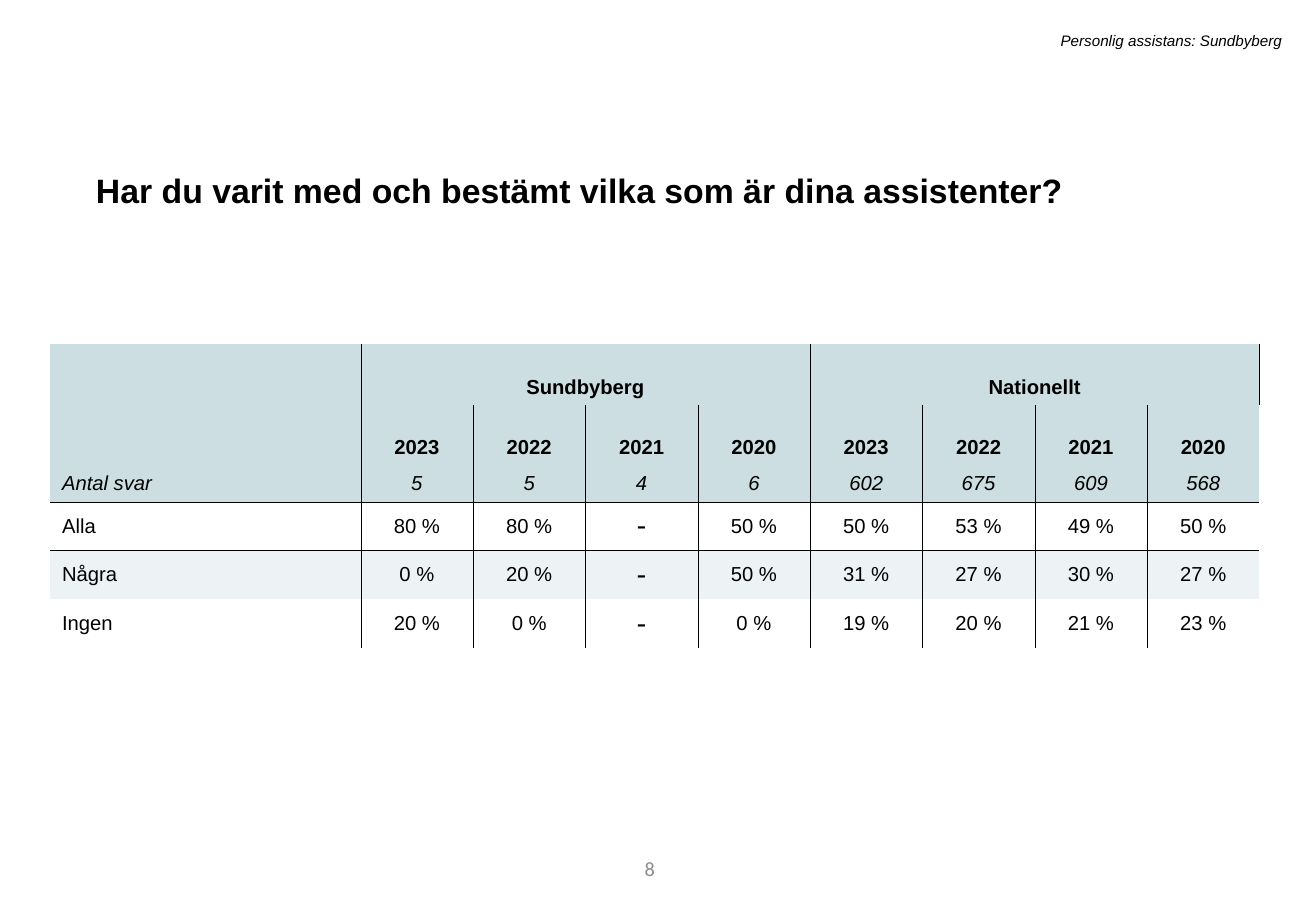
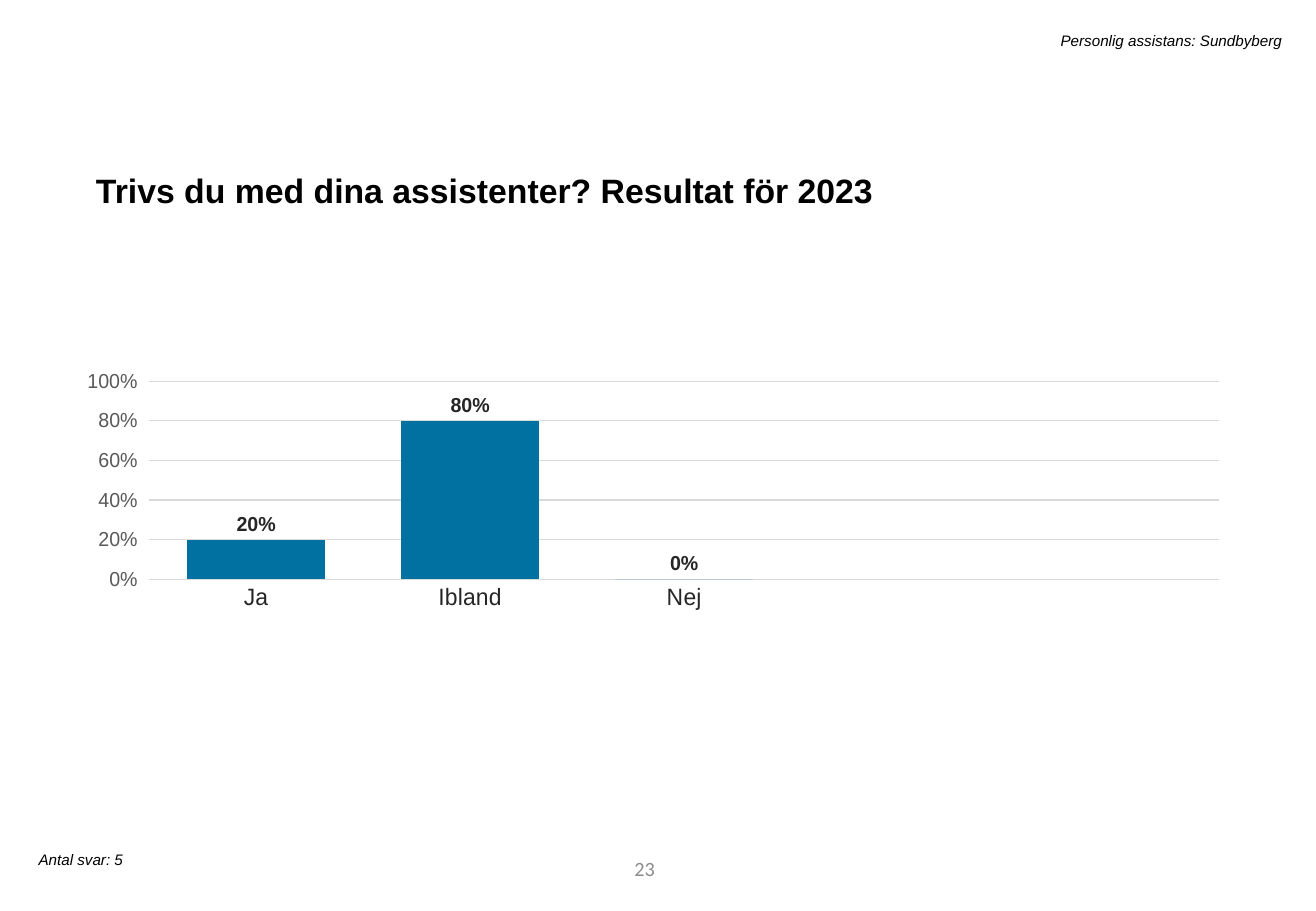
"""Build a two-slide survey report: a results table and a column chart."""
from pptx import Presentation
from pptx.chart.data import CategoryChartData as ChartData
from pptx.dml.color import RGBColor as RGB
from pptx.enum.chart import XL_CHART_TYPE as Kind, XL_LABEL_POSITION as Spot, XL_TICK_MARK as Tick
from pptx.enum.text import MSO_ANCHOR as Anchor, PP_ALIGN as Align
from pptx.oxml import parse_xml
from pptx.oxml.ns import nsdecls, qn
from pptx.util import Pt

BLACK = RGB(0, 0, 0)
DARK = RGB(0x26, 0x26, 0x26)
GREY = RGB(0x59, 0x59, 0x59)
PALE = RGB(0x8C, 0x8C, 0x8C)
RULE = RGB(0xD9, 0xD9, 0xD9)
BLUE = RGB(0x00, 0x71, 0xA1)
HEAD = RGB(0xCC, 0xDE, 0xE1)
BAND = RGB(0xED, 0xF3, 0xF4)

TOPIC = "Personlig assistans: Sundbyberg"
ASKED = "Har du varit med och bestämt vilka som är dina assistenter?"
LIKED = "Trivs du med dina assistenter? Resultat för 2023"
COUNT = "Antal svar: 5"
YEARS = ["2023", "2022", "2021", "2020"]
ROWS = [
    ["", "Sundbyberg", "", "", "", "Nationellt", "", "", ""],
    ["", *YEARS, *YEARS],
    ["Antal svar", "5", "5", "4", "6", "602", "675", "609", "568"],
    ["Alla", "80 %", "80 %", "-", "50 %", "50 %", "53 %", "49 %", "50 %"],
    ["Några", "0 %", "20 %", "-", "50 %", "31 %", "27 %", "30 %", "27 %"],
    ["Ingen", "20 %", "0 %", "-", "0 %", "19 %", "20 %", "21 %", "23 %"],
]
SPANS = [(1, 4), (5, 8)]
HEADS = 3
TALL = [36, 36, 21, 28.8, 28.8, 28.8]
WIDE = [184.2] + [66.6] * 8
BARS = {"Ja": 0.2, "Ibland": 0.8, "Nej": 0, "": None, " ": None}

TITLE_BOX = (49.7, 92.2, 676.8, 33.8)
TOPIC_BOX = (128.9, 15.1, 637.9, 18)
PAGE_BOX = (219.6, 500.4, 175.7, 28.8)
COUNT_BOX = (15.8, 500.4, 204.5, 18)
TABLE_BOX = (29.6, 203.8, sum(WIDE), sum(TALL))
CHART_BOX = (51.8, 182.2, 676.8, 284.4)
PLOT = {"x": 0.025, "y": 0.154, "w": 0.966, "h": 0.413}

BASE = {"name": "Arial", "size": Pt(12), "bold": False, "italic": False}
BOLD = {**BASE, "bold": True}
LEAN = {**BASE, "italic": True}
DASH = {**BASE, "name": "Calibri", "size": Pt(18)}
NOTE = {**LEAN, "size": Pt(9)}
PAGE = {**BASE, "name": "Calibri"}
LARGE = {**BOLD, "size": Pt(20)}
LINE = {"line_spacing": 1.2, "space_before": Pt(10), "alignment": Align.LEFT}
NO_GRID = "{2D5ABB26-0587-4C30-8999-92F81FD0307C}"


def apply(obj, style):
    for key, val in style.items():
        setattr(obj, key, val)


def ink(font, style, color=BLACK):
    apply(font, style)
    font.color.rgb = color


def place(shape, box):
    apply(shape, dict(zip(("left", "top", "width", "height"), map(Pt, box))))


def write(slide, text, box, style, align, color=BLACK, anchor=Anchor.TOP):
    frame = slide.shapes.add_textbox(*map(Pt, box)).text_frame
    apply(frame, {"word_wrap": True, "vertical_anchor": anchor, "text": text})
    para = frame.paragraphs[0]
    para.alignment = align
    ink(para.runs[0].font, style, color)


def start(deck, title, page):
    slide = deck.slides.add_slide(deck.slide_layouts[5])
    head = slide.shapes.title
    place(head, TITLE_BOX)
    apply(head.text_frame, {"text": title, "vertical_anchor": Anchor.TOP})
    para = head.text_frame.paragraphs[0]
    apply(para, LINE)
    ink(para.runs[0].font, LARGE)
    write(slide, TOPIC, TOPIC_BOX, NOTE, Align.RIGHT)
    write(slide, page, PAGE_BOX, PAGE, Align.RIGHT, PALE, Anchor.MIDDLE)
    return slide


def edge(cell, sides):
    for side in sides:
        cell._tc.get_or_add_tcPr().append(parse_xml(
            f'<a:ln{side} {nsdecls("a")} w="3175"><a:solidFill>'
            f'<a:srgbClr val="{BLACK}"/></a:solidFill></a:ln{side}>'))


def sides(row, col):
    out = "L" if col else ""
    if row == 0 and col in (SPANS[-1]):
        out += "R"
    if row == HEADS:
        out += "T"
    if row == HEADS - 1:
        out += "B"
    return out


def paint(cell, row):
    if row < HEADS or row == HEADS + 1:
        cell.fill.solid()
        cell.fill.fore_color.rgb = HEAD if row < HEADS else BAND
    else:
        cell.fill.background()


def fill(cell, text, row, col):
    apply(cell, {"text": text,
                 "vertical_anchor": Anchor.BOTTOM if row < 2 else Anchor.MIDDLE})
    para = cell.text_frame.paragraphs[0]
    para.alignment = Align.CENTER if col else Align.LEFT
    style = BOLD if row < 2 else LEAN if row < HEADS else BASE
    ink(para.font, style)
    for run in para.runs:
        ink(run.font, DASH if text == "-" else style)
    if row or col in (0, *SPANS[0][:1], *SPANS[1]):
        edge(cell, sides(row, col))
    paint(cell, row)


def grid(slide):
    table = slide.shapes.add_table(len(ROWS), len(WIDE), *map(Pt, TABLE_BOX)).table
    apply(table, {"first_row": False, "horz_banding": False})
    table._tbl.tblPr.find(qn("a:tableStyleId")).text = NO_GRID
    for col, wide in zip(table.columns, WIDE):
        col.width = Pt(wide)
    for row, tall in zip(table.rows, TALL):
        row.height = Pt(tall)
    for r, texts in enumerate(ROWS):
        for c, text in enumerate(texts):
            fill(table.cell(r, c), text, r, c)
    for first, last in SPANS:
        table.cell(0, first).merge(table.cell(0, last))


def layout(chart):
    area = chart._chartSpace.chart.plotArea
    for old in area.findall(qn("c:layout")):
        area.remove(old)
    modes = "".join(f'<c:{k}Mode val="edge"/>' for k in "xy")
    sizes = "".join(f'<c:{k} val="{v}"/>' for k, v in PLOT.items())
    area.insert(0, parse_xml(
        f'<c:layout {nsdecls("c")}><c:manualLayout><c:layoutTarget val="inner"/>'
        f'{modes}{sizes}</c:manualLayout></c:layout>'))


def graph(slide):
    data = ChartData(number_format="0%")
    data.categories = [name.strip() for name in BARS]
    data.add_series("Series 1", BARS.values())
    chart = slide.shapes.add_chart(
        Kind.COLUMN_CLUSTERED, *map(Pt, CHART_BOX), data).chart
    apply(chart, {"has_legend": False, "has_title": False})
    ink(chart.font, {**BASE, "size": Pt(10)})
    layout(chart)

    names, scale = chart.category_axis, chart.value_axis
    apply(names, {"major_tick_mark": Tick.NONE, "has_major_gridlines": False})
    apply(scale, {"minimum_scale": 0, "maximum_scale": 1, "major_unit": 0.2,
                  "major_tick_mark": Tick.OUTSIDE, "has_major_gridlines": True})
    ink(names.tick_labels.font, {**BASE, "size": Pt(14)}, DARK)
    ink(scale.tick_labels.font, BASE, GREY)
    apply(scale.tick_labels, {"number_format": "0%", "number_format_is_linked": False})
    scale.format.line.fill.background()
    for line in (names.format.line, scale.major_gridlines.format.line):
        line.width = Pt(0.75)
        line.color.rgb = RULE

    plot = chart.plots[0]
    apply(plot, {"gap_width": 55, "vary_by_categories": False})
    bars = plot.series[0]
    bars.format.fill.solid()
    bars.format.fill.fore_color.rgb = BLUE
    tags = bars.data_labels
    apply(tags, {"show_value": True, "position": Spot.OUTSIDE_END,
                 "number_format": "0%", "number_format_is_linked": False})
    ink(tags.font, BOLD, DARK)


def main():
    deck = Presentation()
    apply(deck, {"slide_width": Pt(780), "slide_height": Pt(540)})
    grid(start(deck, ASKED, "8"))
    slide = start(deck, LIKED, "23")
    graph(slide)
    write(slide, COUNT, COUNT_BOX, NOTE, Align.LEFT)
    deck.save("out.pptx")


if __name__ == "__main__":
    main()
